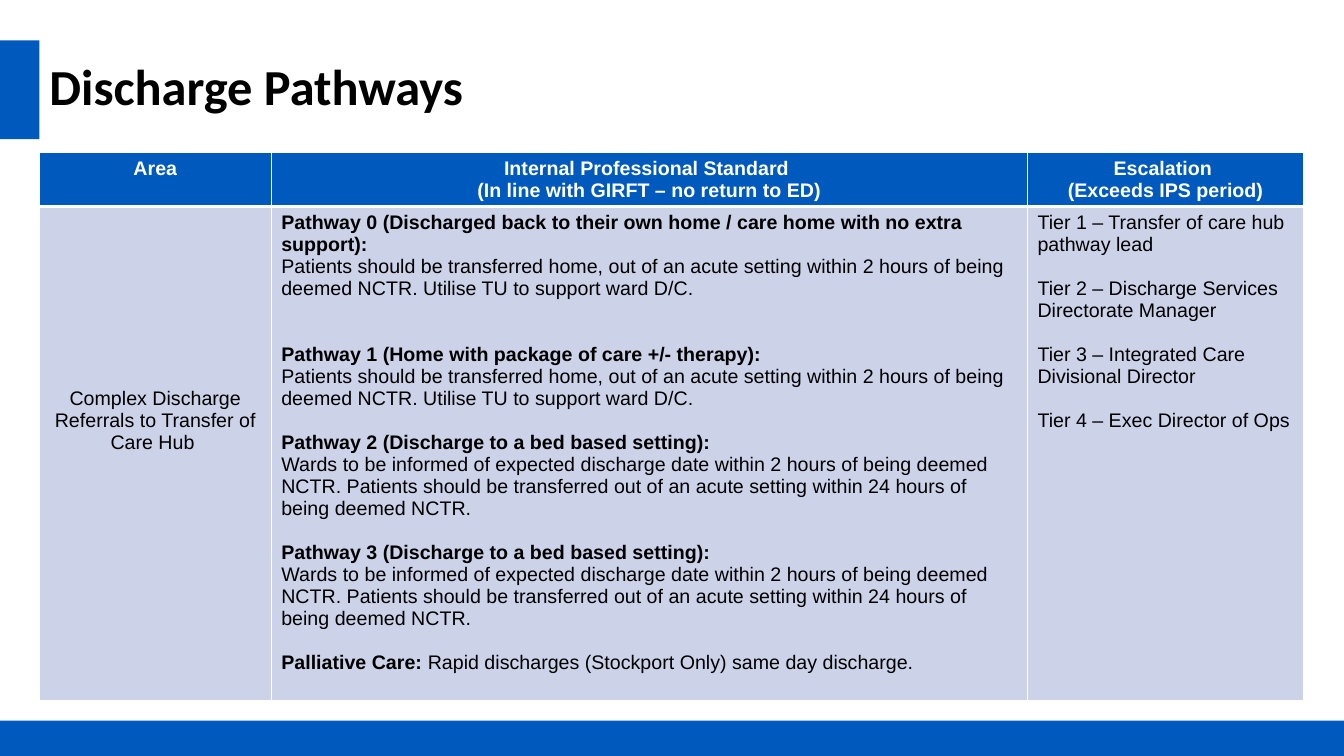
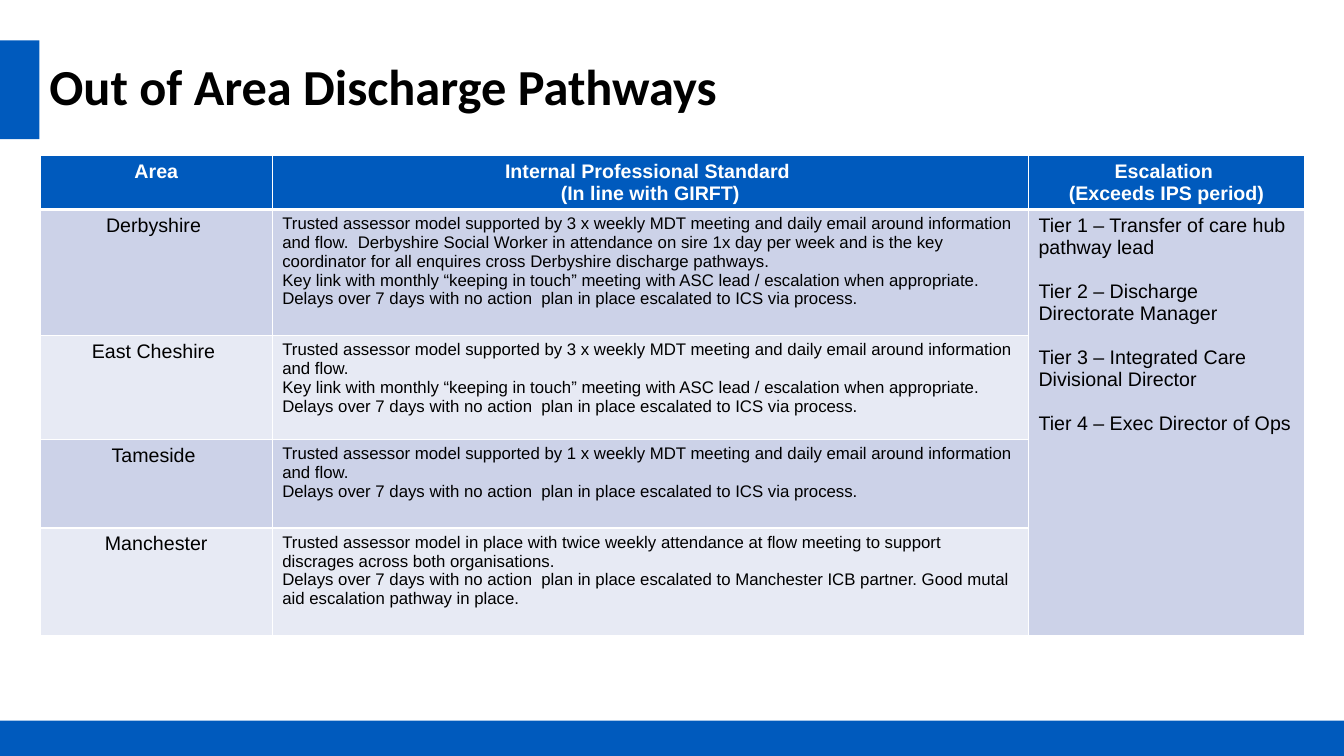
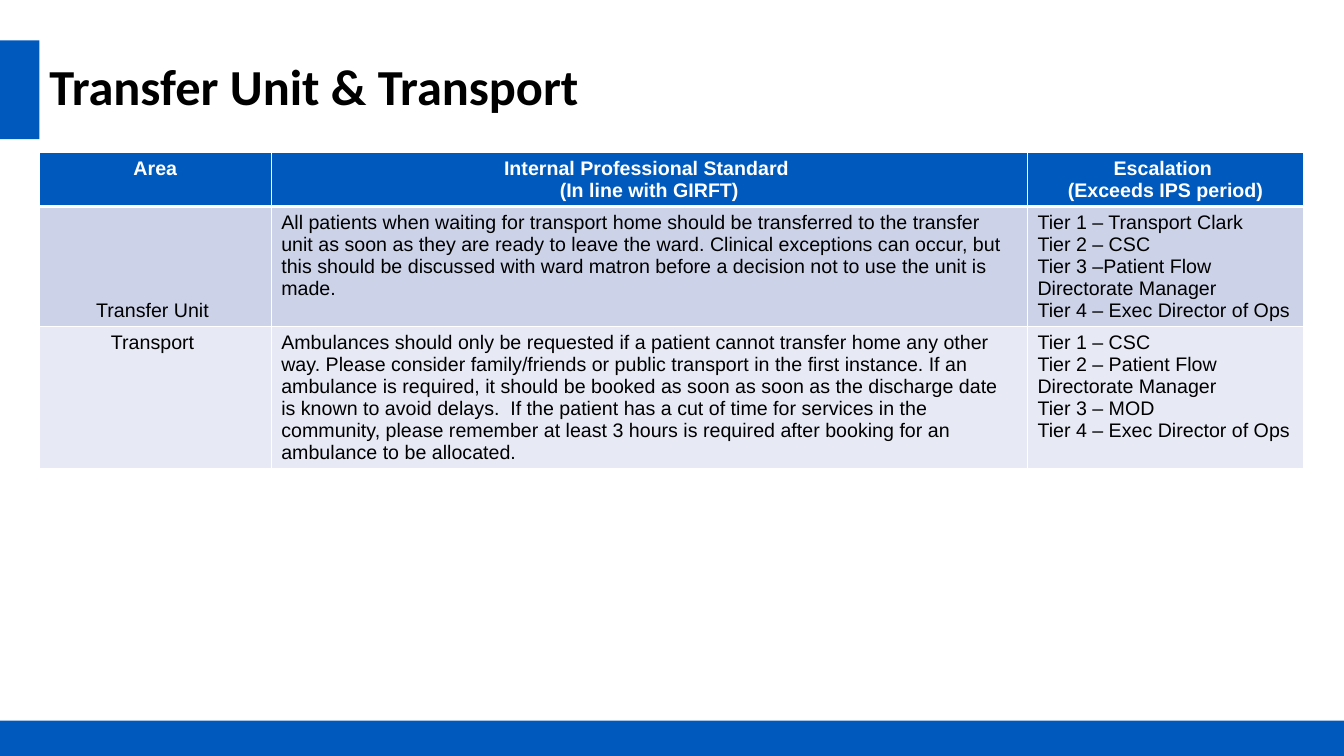
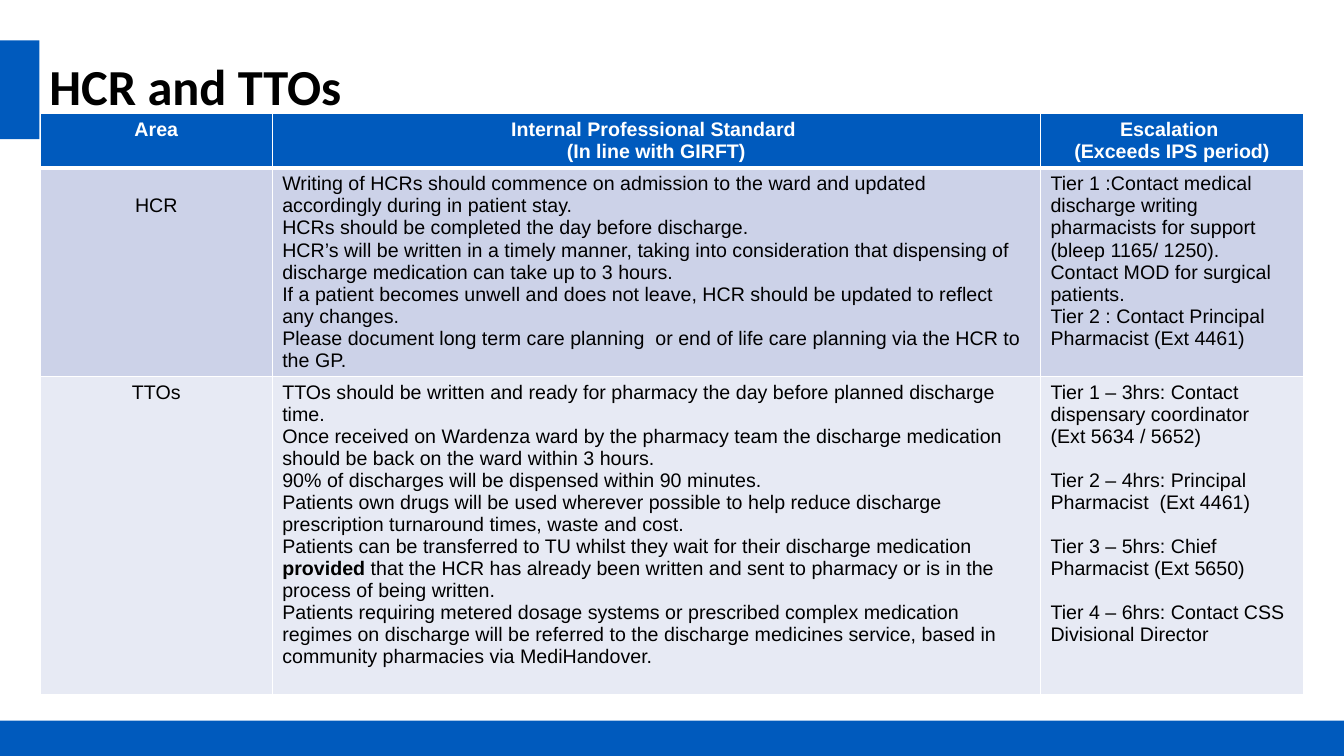
import dataclasses

import lxml.etree
import pptx
import pptx.dml.color
import pptx.enum.shapes
import pptx.enum.text
import pptx.oxml.ns
import pptx.util

Inches = pptx.util.Inches
Pt = pptx.util.Pt
ALIGN = pptx.enum.text.PP_ALIGN
ANCHOR = pptx.enum.text.MSO_ANCHOR

COLORS = {
    "blue": "005ABD",
    "white": "FFFFFF",
    "black": "000000",
    "odd_row": "CCD2E8",
    "even_row": "E7EAF4",
}
TITLE_BOX = (0.39, 0.4, 10.78, 0.98)
TITLE_BAND = (0, 0.4, 0.39, 0.98)
FOOTER_BAND = (0, 7.15, 13.33, 0.35)
HEADER_HEIGHT = 0.53
LINE_POINTS = 15.7  # one line of 14 point text
CELL_MARGIN = 0.05
TIER_4 = "Tier 4 – Exec Director of Ops"


@dataclasses.dataclass
class Row:
    """One area; drop is how many lines its name sits below the top."""
    height: float
    area: str
    standard: list
    escalation: list = None
    drop: int = 0


@dataclasses.dataclass
class Standards:
    title: str
    box: tuple
    rows: list
    columns: tuple = (2.3, 7.5, 2.74)
    guidance: str = "(In line with GIRFT)"
    size: int = 14


def spaced(text, lines=1):
    """Mark a paragraph as standing some lines below the one before."""
    return text, lines


def rgb(name):
    return pptx.dml.color.RGBColor.from_string(COLORS[name])


def write_text(frame, paragraphs, *, size=14, font="Arial", color="black",
               bold=False, align=ALIGN.LEFT, line_spacing=None):
    """Fill a frame; words between double asterisks are bold."""
    for index, item in enumerate(paragraphs):
        text, lines = item if isinstance(item, tuple) else (item, 0)
        para = frame.paragraphs[0] if index == 0 else frame.add_paragraph()
        para.alignment = align
        para.line_spacing = line_spacing
        para.space_before = Pt(lines * LINE_POINTS)
        for part, words in enumerate(text.split("**")):
            if not words:
                continue
            span = para.add_run()
            span.text = words
            span.font.name = font
            span.font.size = Pt(size)
            span.font.bold = bold or part % 2 == 1
            span.font.color.rgb = rgb(color)


def set_borders(cell, **widths):
    """Draw white cell borders; widths in points by side L, R, T, B."""
    properties = cell._tc.get_or_add_tcPr()
    for index, side in enumerate("LRTB"):
        line = lxml.etree.Element(pptx.oxml.ns.qn(f"a:ln{side}"),
                                  w=str(Pt(widths.get(side, 1))))
        fill = lxml.etree.SubElement(line, pptx.oxml.ns.qn("a:solidFill"))
        lxml.etree.SubElement(fill, pptx.oxml.ns.qn("a:srgbClr"),
                              val=COLORS["white"])
        properties.insert(index, line)


def fill_cell(cell, paragraphs, fill, borders, drop=0, **text_format):
    cell.fill.solid()
    cell.fill.fore_color.rgb = rgb(fill)
    cell.vertical_anchor = ANCHOR.TOP
    cell.margin_top = Inches(CELL_MARGIN) + Pt(drop * LINE_POINTS)
    set_borders(cell, **borders)
    write_text(cell.text_frame, paragraphs, **text_format)


def add_standards_table(page, standards):
    left, top = standards.box
    heights = [HEADER_HEIGHT] + [row.height for row in standards.rows]
    table = page.shapes.add_table(
        len(heights), len(standards.columns), Inches(left), Inches(top),
        Inches(sum(standards.columns)), Inches(sum(heights))).table
    for column, width in zip(table.columns, standards.columns):
        column.width = Inches(width)
    for table_row, height in zip(table.rows, heights):
        table_row.height = Inches(height)

    headings = [["Area"],
                ["Internal Professional Standard ", standards.guidance],
                ["Escalation ", "(Exceeds IPS period)"]]
    for column, heading in enumerate(headings):
        fill_cell(table.cell(0, column), heading, "blue", {"B": 3},
                  color="white", bold=True, align=ALIGN.CENTER)

    for index, row in enumerate(standards.rows, 1):
        fill = "odd_row" if index % 2 else "even_row"
        borders = {"T": 3 if index == 1 else 1}
        fill_cell(table.cell(index, 0), [row.area], fill, borders,
                  drop=row.drop, align=ALIGN.CENTER)
        fill_cell(table.cell(index, 1), row.standard, fill, borders,
                  size=standards.size)
        fill_cell(table.cell(index, 2), row.escalation or [], fill, borders)

    if standards.rows[-1].escalation is None:
        table.cell(1, 2).merge(table.cell(len(standards.rows), 2))


def place_title(page, text):
    title = page.shapes.title
    title.left, title.top, title.width, title.height = map(Inches, TITLE_BOX)
    frame = title.text_frame
    frame.word_wrap = True
    frame.auto_size = pptx.enum.text.MSO_AUTO_SIZE.NONE
    frame.vertical_anchor = ANCHOR.MIDDLE
    write_text(frame, [text], size=36, font="Calibri", bold=True,
               line_spacing=0.9)


def add_band(page, box):
    band = page.shapes.add_shape(
        pptx.enum.shapes.MSO_SHAPE.RECTANGLE, *map(Inches, box))
    band.shadow.inherit = False
    band.fill.solid()
    band.fill.fore_color.rgb = rgb("blue")
    band.line.fill.background()


HOME_TRANSFER = (
    "Patients should be transferred home, out of an acute setting within "
    "2 hours of being deemed NCTR. Utilise TU to support ward D/C.")
BED_TRANSFER = (
    "Wards to be informed of expected discharge date within 2 hours of being "
    "deemed NCTR. Patients should be transferred out of an acute setting "
    "within 24 hours of being deemed NCTR.")
DELAYS = "Delays over 7 days with no action  plan in place escalated to "
KEY_LINK = (
    "Key link with monthly “keeping in touch” meeting with ASC lead / "
    "escalation when appropriate. " + DELAYS + "ICS via process.")


def assessor_model(meetings):
    return (f"Trusted assessor model supported by {meetings} x weekly MDT "
            "meeting and daily email around information and flow.")


def care_hub_tiers(manager):
    return ["Tier 1 – Transfer of care hub pathway lead",
            spaced(f"Tier 2 – {manager} Directorate Manager"),
            spaced("Tier 3 – Integrated Care Divisional Director"),
            spaced(TIER_4)]


PAGES = [
    Standards(
        "Discharge Pathways", (0.39, 1.51),
        guidance="(In line with GIRFT – no return to ED)",
        rows=[Row(
            4.9, "Complex Discharge Referrals to Transfer of Care Hub ",
            ["**Pathway 0 (Discharged back to their own home / care home "
             "with no extra support):**",
             HOME_TRANSFER,
             spaced("**Pathway 1 (Home with package of care +/- therapy):**",
                    lines=2),
             HOME_TRANSFER,
             spaced("**Pathway 2 (Discharge to a bed based setting):**"),
             BED_TRANSFER,
             spaced("**Pathway 3 (Discharge to a bed based setting):**"),
             BED_TRANSFER,
             spaced("**Palliative Care: **Rapid discharges (Stockport Only) "
                    "same day discharge.")],
            care_hub_tiers("Discharge Services"), drop=8)]),
    Standards(
        "Out of Area Discharge Pathways", (0.4, 1.54), size=12,
        rows=[
            Row(1.25, "Derbyshire ",
                [assessor_model(3) + "  Derbyshire Social Worker in "
                 "attendance on sire 1x day per week and is the key "
                 "coordinator for all enquires cross Derbyshire discharge "
                 "pathways.",
                 KEY_LINK],
                care_hub_tiers("Discharge")),
            Row(1.03, "East Cheshire ", [assessor_model(3), KEY_LINK]),
            Row(0.88, "Tameside ",
                [assessor_model(1), DELAYS + "ICS via process."]),
            Row(1.07, "Manchester",
                ["Trusted assessor model in place with twice weekly "
                 "attendance at flow meeting to support discrages across "
                 "both organisations.",
                 DELAYS + "Manchester ICB partner. Good mutal aid "
                 "escalation pathway in place."])]),
    Standards(
        "Transfer Unit & Transport", (0.39, 1.51),
        rows=[
            Row(1.19, "Transfer Unit ",
                ["All patients when waiting for transport home should be "
                 "transferred to the transfer unit as soon as they are ready "
                 "to leave the ward. Clinical exceptions can occur, but this "
                 "should be discussed with ward matron before a decision not "
                 "to use the unit is made."],
                ["Tier 1 – Transport Clark", "Tier 2 – CSC",
                 "Tier 3 –Patient Flow Directorate Manager", TIER_4],
                drop=4),
            Row(1.41, "Transport ",
                ["Ambulances should only be requested if a patient cannot "
                 "transfer home any other way. Please consider "
                 "family/friends or public transport in the first instance. "
                 "If an ambulance is required, it should be booked as soon "
                 "as soon as the discharge date is known to avoid delays.  "
                 "If the patient has a cut of time for services in the "
                 "community, please remember at least 3 hours is required "
                 "after booking for an ambulance to be allocated."],
                ["Tier 1 – CSC", "Tier 2 – Patient Flow Directorate Manager",
                 "Tier 3 – MOD", TIER_4])]),
    Standards(
        "HCR and TTOs", (0.4, 1.13), columns=(2.3, 7.62, 2.61),
        rows=[
            Row(2.07, "HCR",
                ["Writing of HCRs should commence on admission to the ward "
                 "and updated accordingly during in patient stay.",
                 "HCRs should be completed the day before discharge.",
                 "HCR’s will be written in a timely manner, taking into "
                 "consideration that dispensing of discharge medication can "
                 "take up to 3 hours.",
                 "If a patient becomes unwell and does not leave, HCR should "
                 "be updated to reflect any changes.",
                 "Please document long term care planning  or end of life "
                 "care planning via the HCR to the GP."],
                ["Tier 1 :Contact medical discharge writing pharmacists for "
                 "support",
                 "(bleep 1165/ 1250).",
                 "Contact MOD for surgical patients.",
                 "Tier 2 : Contact Principal Pharmacist (Ext 4461)"],
                drop=1),
            Row(3.15, "TTOs",
                ["TTOs should be written and ready for pharmacy the day "
                 "before planned discharge time.",
                 "Once received on Wardenza ward by the pharmacy team the "
                 "discharge medication should be back on the ward within "
                 "3 hours.",
                 "90% of discharges will be dispensed within 90 minutes.",
                 "Patients own drugs will be used wherever possible to help "
                 "reduce discharge prescription turnaround times, waste and "
                 "cost.",
                 "Patients can be transferred to TU whilst they wait for "
                 "their discharge medication **provided** that the HCR has "
                 "already been written and sent to pharmacy or is in the "
                 "process of being written.",
                 "Patients requiring metered dosage systems or prescribed "
                 "complex medication regimes on discharge will be referred "
                 "to the discharge medicines service, based in community "
                 "pharmacies via MediHandover."],
                ["Tier 1 – 3hrs: Contact dispensary coordinator",
                 "(Ext 5634 / 5652)",
                 spaced("Tier 2 – 4hrs: Principal Pharmacist  (Ext 4461)"),
                 spaced("Tier 3 – 5hrs: Chief Pharmacist (Ext 5650)"),
                 spaced("Tier 4 – 6hrs: Contact CSS Divisional Director")])]),
]


def main():
    deck = pptx.Presentation()
    deck.slide_width, deck.slide_height = Inches(13.33), Inches(7.5)
    title_only = deck.slide_layouts[5]
    for standards in PAGES:
        page = deck.slides.add_slide(title_only)
        for box in (TITLE_BAND, FOOTER_BAND):
            add_band(page, box)
        place_title(page, standards.title)
        add_standards_table(page, standards)
    deck.save("out.pptx")


if __name__ == "__main__":
    main()
